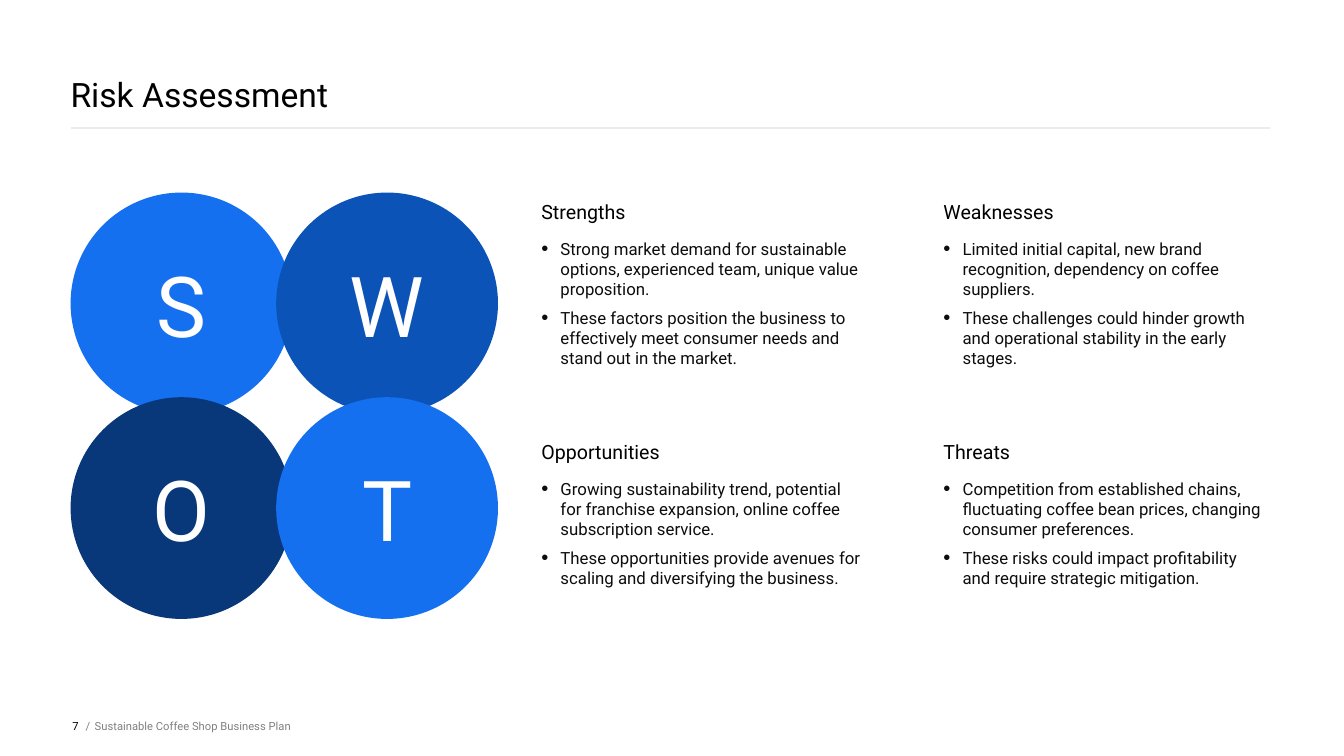
import pptx
import pptx.util
import pptx.dml.color
import pptx.enum.shapes
import pptx.enum.text
from lxml import etree

RGB = pptx.dml.color.RGBColor
PP = pptx.enum.text.PP_ALIGN
MSO = pptx.enum.text.MSO_ANCHOR

BLUE = RGB(0x15, 0x70, 0xEF)
ROYAL = RGB(0x0C, 0x53, 0xB7)
NAVY = RGB(0x08, 0x38, 0x7A)
WHITE = RGB(0xFF, 0xFF, 0xFF)
BLACK = RGB(0, 0, 0)
INK = RGB(0x0D, 0x0D, 0x0D)
GREY = RGB(0x80, 0x80, 0x80)
RULE = RGB(0xEA, 0xEC, 0xF0)

# Letter, colour, heading and points, in reading order
SWOT = [
    ("S", BLUE, "Strengths", [
        "Strong market demand for sustainable options, experienced team, unique value proposition.",
        "These factors position the business to effectively meet consumer needs and stand out in the market."]),
    ("W", ROYAL, "Weaknesses", [
        "Limited initial capital, new brand recognition, dependency on coffee suppliers.",
        "These challenges could hinder growth and operational stability in the early stages."]),
    ("O", NAVY, "Opportunities", [
        "Growing sustainability trend, potential for franchise expansion, online coffee subscription service.",
        "These opportunities provide avenues for scaling and diversifying the business."]),
    ("T", BLUE, "Threats", [
        "Competition from established chains, fluctuating coffee bean prices, changing consumer preferences.",
        "These risks could impact profitability and require strategic mitigation."]),
]


class Deck:
    """Style and current slide; lengths are percent of the slide's size."""
    font = "Roboto"

    def __init__(self):
        self.prs = pptx.Presentation()
        self.prs.slide_width = pptx.util.Inches(13.33)
        self.prs.slide_height = pptx.util.Inches(7.5)
        self.slide = self.prs.slides.add_slide(self.prs.slide_layouts[6])

    def x(self, share):
        return round(self.prs.slide_width * share / 100)

    def y(self, share):
        return round(self.prs.slide_height * share / 100)

    def box(self, left, top, wide, high):
        return self.x(left), self.y(top), self.x(wide), self.y(high)

    def fill(self, shape, lines, size, color, align, anchor, before=0, dots=False):
        frame = shape.text_frame
        frame.word_wrap = True
        frame.vertical_anchor = anchor
        frame.margin_left = frame.margin_right = 0
        frame.margin_top = frame.margin_bottom = 0
        for i, line in enumerate(lines):
            para = frame.add_paragraph() if i else frame.paragraphs[0]
            para.alignment = align
            para.space_before = pptx.util.Pt(before)
            if dots:
                self.dot(para)
            run = para.add_run()
            run.text = line
            run.font.name = self.font
            run.font.size = pptx.util.Pt(size)
            run.font.color.rgb = color

    def dot(self, para):
        props = para._p.get_or_add_pPr()
        indent = pptx.util.Inches(0.19)
        props.set("marL", str(indent))
        props.set("indent", str(-indent))
        for tag, key, val in (("buSzPct", "val", "120000"),
                              ("buFont", "typeface", "Arial"),
                              ("buChar", "char", "•")):
            etree.SubElement(props, pptx.oxml.ns.qn("a:" + tag)).set(key, val)

    def text(self, place, lines, size, color=BLACK, align=PP.LEFT,
             anchor=MSO.MIDDLE, **more):
        shape = self.slide.shapes.add_textbox(*self.box(*place))
        self.fill(shape, lines, size, color, align, anchor, **more)

    def disc(self, place, letter, color):
        shape = self.slide.shapes.add_shape(
            pptx.enum.shapes.MSO_SHAPE.OVAL, *self.box(*place))
        shape.shadow.inherit = False
        shape.fill.solid()
        shape.fill.fore_color.rgb = color
        shape.line.fill.background()
        self.fill(shape, [letter], 60, WHITE, PP.CENTER, MSO.MIDDLE)

    def rule(self, left, right, top):
        line = self.slide.shapes.add_connector(
            pptx.enum.shapes.MSO_CONNECTOR.STRAIGHT,
            self.x(left), self.y(top), self.x(right), self.y(top))
        line.line.color.rgb = RULE
        line.line.width = pptx.util.Pt(2)
        etree.SubElement(line._element.spPr, pptx.oxml.ns.qn("a:effectLst"))


def main():
    deck = Deck()

    # Title and rule
    deck.text((5.25, 0, 89.55, 15.07), ["Risk Assessment"], 24,
              anchor=MSO.BOTTOM, before=10)
    deck.rule(5.25, 94.5, 16.93)

    # Two by two: discs on the left, texts on the right
    for i, (letter, color, head, points) in enumerate(SWOT):
        row, col = divmod(i, 2)
        deck.disc((5.25 + 15.3 * col, 25.47 + 27.07 * row, 16.5, 29.33),
                  letter, color)
        left, down = 40.28 + 29.92 * col, 31.73 * row
        deck.text((left, 25.6 + down, 24, 4), [head], 14, anchor=MSO.BOTTOM)
        deck.text((left, 31.6 + down, 24, 20), points, 12, INK,
                  anchor=MSO.TOP, before=6, dots=True)

    # Footer
    deck.text((3.5, 92, 2.35, 8), ["7"], 8, align=PP.RIGHT, before=10)
    deck.text((6.38, 92.13, 0.6, 7.87), ["/"], 8, GREY)
    deck.text((7.05, 92, 64.6, 8), ["Sustainable Coffee Shop Business Plan"],
              8, GREY, before=10)

    deck.prs.save("out.pptx")


if __name__ == "__main__":
    main()
